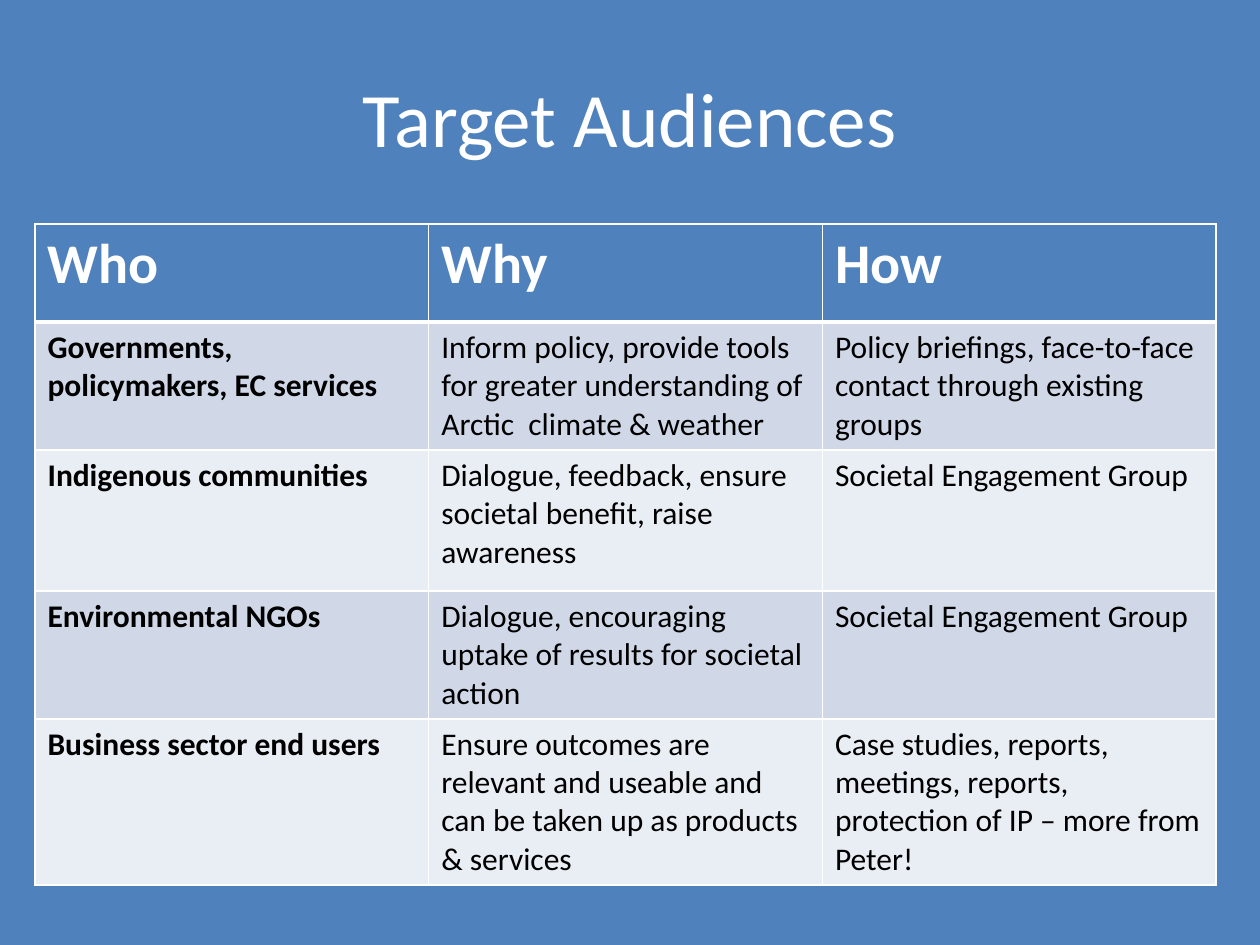
import dataclasses

import lxml.etree
import pptx
import pptx.dml.color
import pptx.enum.text
import pptx.oxml.ns
import pptx.util

Pt = pptx.util.Pt


@dataclasses.dataclass(frozen=True)
class Theme:
    font: str = "Calibri"
    blue: str = "4F81BD"
    white: str = "FFFFFF"
    black: str = "000000"
    bands: tuple = ("D0D8E8", "E9EDF4")
    title_size: int = 44
    header_size: int = 32
    body_size: int = 18
    thin_line: int = 1
    header_line: int = 3


THEME = Theme()
COLUMN_WIDTH = 225
ROW_HEIGHTS = (56, 73, 80.5, 73, 94.5)
AUDIENCES = (
    ("Who", "Why", "How"),
    ("Governments, policymakers, EC services",
     "Inform policy, provide tools for greater understanding of Arctic  climate & weather",
     "Policy briefings, face-to-face contact through existing groups"),
    ("Indigenous communities",
     "Dialogue, feedback, ensure societal benefit, raise awareness",
     "Societal Engagement Group"),
    ("Environmental NGOs",
     "Dialogue, encouraging uptake of results for societal action",
     "Societal Engagement Group"),
    ("Business sector end users",
     "Ensure outcomes are relevant and useable and can be taken up as products & services",
     "Case studies, reports, meetings, reports, protection of IP – more from Peter!"),
)


def rgb(color):
    return pptx.dml.color.RGBColor.from_string(color)


def fill_solid(fill, color):
    fill.solid()
    fill.fore_color.rgb = rgb(color)


def set_text(text_frame, text, size, color, bold=False):
    text_frame.text = text
    font = text_frame.paragraphs[0].runs[0].font
    font.name = THEME.font
    font.size = Pt(size)
    font.bold = bold
    font.color.rgb = rgb(color)


def add_border(cell, side, width):
    qn = pptx.oxml.ns.qn
    properties = cell._tc.get_or_add_tcPr()
    line = lxml.etree.SubElement(properties, qn(f"a:ln{side}"), w=str(Pt(width)))
    solid = lxml.etree.SubElement(line, qn("a:solidFill"))
    lxml.etree.SubElement(solid, qn("a:srgbClr"), val=THEME.white)


def format_cell(cell, text, row, column):
    header = row == 0
    heavy_side = {0: "B", 1: "T"}.get(row)
    for side in "LRTB":
        add_border(cell, side, THEME.header_line if side == heavy_side else THEME.thin_line)
    fill_solid(cell.fill, THEME.blue if header else THEME.bands[(row - 1) % 2])
    set_text(cell.text_frame, text,
             THEME.header_size if header else THEME.body_size,
             THEME.white if header else THEME.black,
             bold=header or column == 0)


def add_title(page, text):
    title = page.shapes.title
    title.left, title.top, title.width, title.height = Pt(36), Pt(21.6), Pt(648), Pt(90)
    title.text_frame.vertical_anchor = pptx.enum.text.MSO_ANCHOR.MIDDLE
    set_text(title.text_frame, text, THEME.title_size, THEME.white)
    title.text_frame.paragraphs[0].alignment = pptx.enum.text.PP_ALIGN.CENTER


def add_audience_table(page):
    columns = len(AUDIENCES[0])
    table = page.shapes.add_table(len(AUDIENCES), columns, Pt(20), Pt(128),
                                  Pt(columns * COLUMN_WIDTH), Pt(sum(ROW_HEIGHTS))).table
    for column in table.columns:
        column.width = Pt(COLUMN_WIDTH)
    for row, (height, texts) in enumerate(zip(ROW_HEIGHTS, AUDIENCES)):
        table.rows[row].height = Pt(height)
        for column, text in enumerate(texts):
            format_cell(table.cell(row, column), text, row, column)


def main():
    deck = pptx.Presentation()
    deck.slide_width, deck.slide_height = Pt(720), Pt(540)
    page = deck.slides.add_slide(deck.slide_layouts[5])
    fill_solid(page.background.fill, THEME.blue)
    add_title(page, "Target Audiences")
    add_audience_table(page)
    deck.save("out.pptx")


if __name__ == "__main__":
    main()
